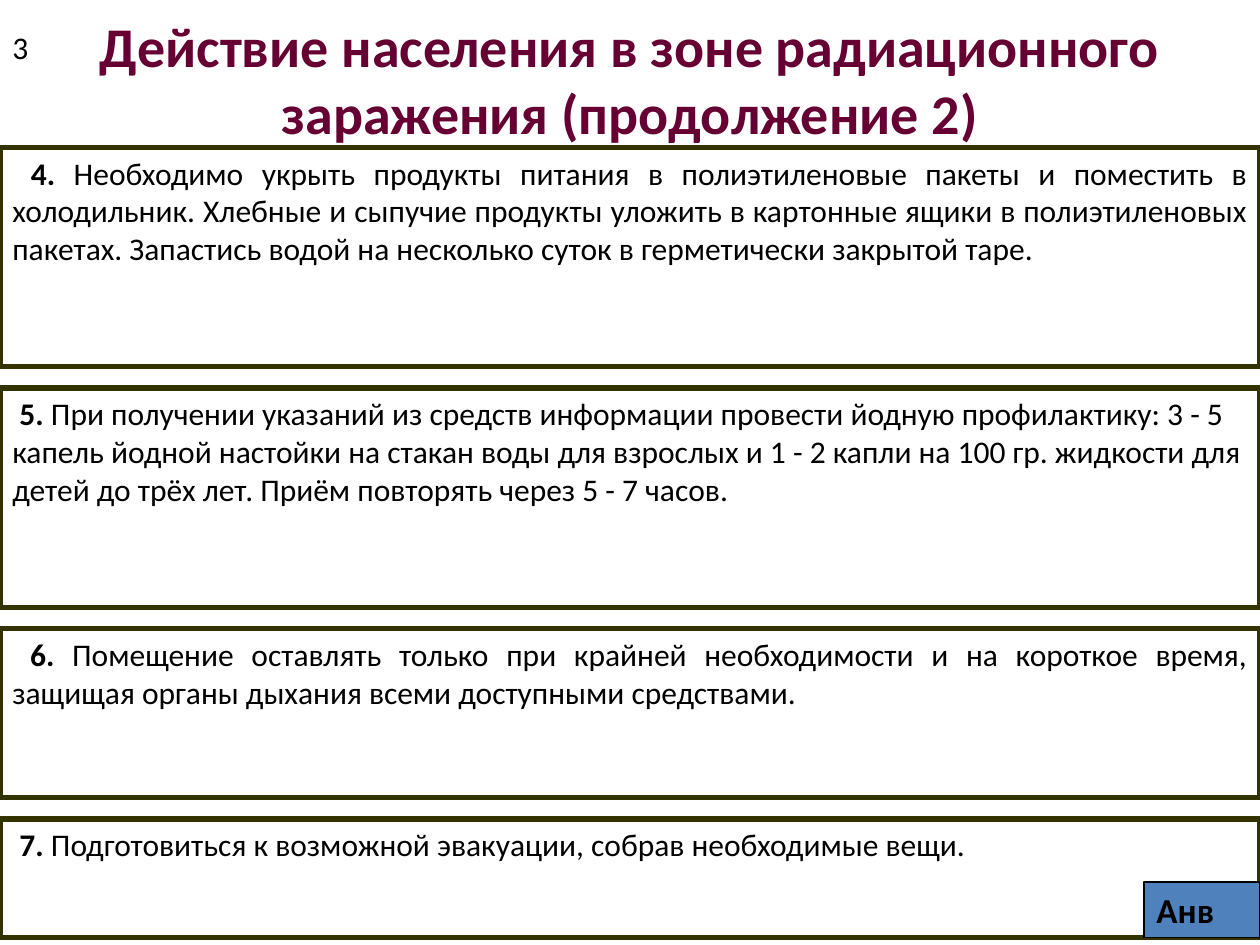
from pptx import Presentation
from pptx import util as u
from pptx.dml.color import RGBColor
from pptx.enum import shapes, text

WIDTH, HEIGHT = 10, 7.5
GAP = 0.17
RULES_TOP = 1.17
INK = "000000"
OLIVE = "333300"
JUSTIFY, LEFT = text.PP_ALIGN.JUSTIFY, text.PP_ALIGN.LEFT

# number, wording, box height, alignment
RULES = [
    ("4.", "Необходимо укрыть продукты питания в полиэтиленовые пакеты и поместить "
     "в холодильник. Хлебные и сыпучие продукты уложить в картонные ящики в "
     "полиэтиленовых пакетах. Запастись водой на несколько суток в герметически "
     "закрытой таре.", 1.74, JUSTIFY),
    ("5.", "При получении указаний из средств информации провести йодную "
     "профилактику: 3 - 5 капель йодной настойки на стакан воды для взрослых и "
     "1 - 2 капли на 100 гр. жидкости для детей до трёх лет. Приём повторять "
     "через 5 - 7 часов.", 1.74, LEFT),
    ("6.", "Помещение оставлять только при крайней необходимости и на короткое "
     "время, защищая органы дыхания всеми доступными средствами.", 1.34, JUSTIFY),
    ("7.", "Подготовиться к возможной эвакуации, собрав необходимые вещи.",
     0.94, JUSTIFY),
]


def color(value):
    return RGBColor.from_string(value)


def inches(box):
    return [u.Inches(side) for side in box]


def place(shape, box):
    for name, side in zip(("left", "top", "width", "height"), inches(box)):
        setattr(shape, name, side)


def write(para, wording, size=18, ink=INK, bold=False):
    span = para.add_run()
    span.text = wording
    for name, value in {"name": "Calibri", "size": u.Pt(size), "bold": bold}.items():
        setattr(span.font, name, value)
    span.font.color.rgb = color(ink)


def start_text(shape, align=LEFT, anchor=text.MSO_ANCHOR.TOP):
    """Sets up the text frame and returns its first paragraph."""
    frame = shape.text_frame
    settings = {"word_wrap": True, "vertical_anchor": anchor,
                "auto_size": text.MSO_AUTO_SIZE.NONE}
    for name, value in settings.items():
        setattr(frame, name, value)
    para = frame.paragraphs[0]
    para.alignment = align
    return para


def add_panel(page, box, line, weight, fill=None):
    panel = page.shapes.add_shape(shapes.MSO_SHAPE.RECTANGLE, *inches(box))
    panel.shadow.inherit = False
    panel.line.color.rgb = color(line)
    panel.line.width = u.Pt(weight)
    if fill:
        panel.fill.solid()
        panel.fill.fore_color.rgb = color(fill)
    else:
        panel.fill.background()
    return panel


def add_title(page, box):
    title = page.shapes.title
    place(title, box)
    para = start_text(title, text.PP_ALIGN.CENTER, text.MSO_ANCHOR.MIDDLE)
    write(para, "Действие населения в зоне радиационного заражения (продолжение 2)",
          32, "660033", True)


def add_rules(page, left, top, width):
    for number, wording, height, align in RULES:
        panel = add_panel(page, (left, top, width, height), OLIVE, 3)
        para = start_text(panel, align)
        write(para, " ")
        write(para, number, bold=True)
        write(para, " " + wording)
        top += height + GAP


def add_page_number(page, box):
    write(start_text(page.shapes.add_textbox(*inches(box))), "3")


def add_badge(page, box):
    badge = add_panel(page, box, INK, 0.75, "4F81BD")
    write(start_text(badge), "Анв", 20, bold=True)


def main():
    deck = Presentation()
    deck.slide_width, deck.slide_height = u.Inches(WIDTH), u.Inches(HEIGHT)
    page = deck.slides.add_slide(deck.slide_layouts[5])
    add_title(page, (0, 0, WIDTH, HEIGHT / 6))
    add_rules(page, 0, RULES_TOP, WIDTH)
    add_page_number(page, (0, GAP, 0.42, 0.5))
    add_badge(page, (WIDTH - 0.92, 7, 0.92, 0.44))
    deck.save("out.pptx")


if __name__ == "__main__":
    main()
